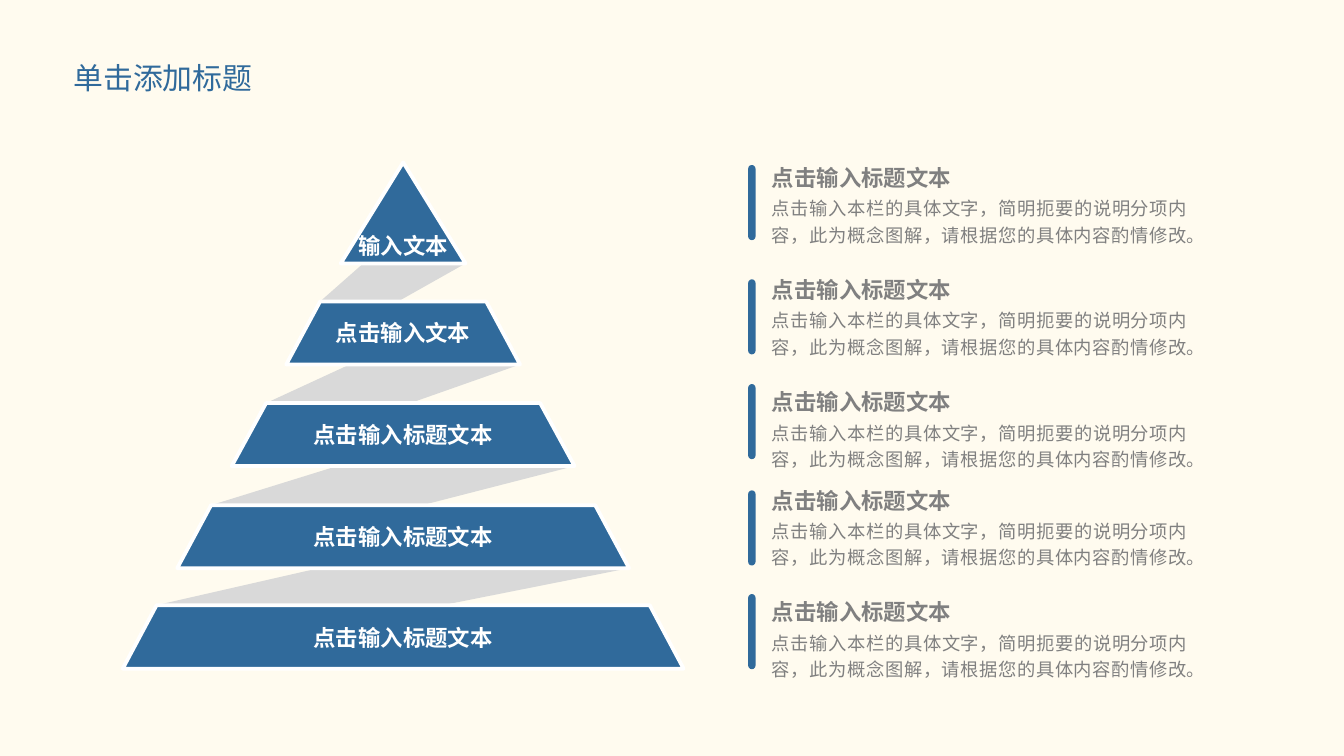
from pptx import Presentation
from pptx.dml.color import RGBColor
from pptx.enum.shapes import MSO_SHAPE
from pptx.enum.text import MSO_ANCHOR, MSO_AUTO_SIZE, PP_ALIGN
from pptx.oxml.ns import qn
from pptx.util import Cm, Pt
from lxml.etree import SubElement

CREAM = RGBColor(0xFF, 0xFB, 0xEF)
BLUE = RGBColor(0x30, 0x6A, 0x9B)
GREY = RGBColor(0x80, 0x80, 0x80)
SILVER = RGBColor(0xD9, 0xD9, 0xD9)
WHITE = RGBColor(0xFF, 0xFF, 0xFF)
FONT = "Noto Sans CJK SC"
CENTER = 7.62
HEADING = "点击输入标题文本"
DETAIL = "点击输入本栏的具体文字，简明扼要的说明分项内容，此为概念图解，请根据您的具体内容酌情修改。"


def write(box, text, size, color, bold=False, align=PP_ALIGN.LEFT, inset=(0, 0)):
    frame = box.text_frame
    frame.text = text
    frame.margin_left = frame.margin_right = Cm(inset[0])
    frame.margin_top = frame.margin_bottom = Cm(inset[1])
    paragraph = frame.paragraphs[0]
    paragraph.alignment = align
    span = paragraph.runs[0]
    span.font.name = FONT
    span.font.size = Pt(size)
    span.font.bold = bold
    span.font.color.rgb = color
    SubElement(span.font._element, qn("a:ea"), typeface=FONT)
    return frame


def draw_polygon(page, points, color):
    corners = [(Cm(x), Cm(y)) for x, y in points]
    builder = page.shapes.build_freeform(*corners[0])
    builder.add_line_segments(corners[1:], close=True)
    polygon = builder.convert_to_shape()
    polygon.shadow.inherit = False
    polygon.fill.solid()
    polygon.fill.fore_color.rgb = color
    polygon.line.fill.background()
    return polygon


deck = Presentation()
deck.slide_width, deck.slide_height = Cm(25.4), Cm(14.29)
page = deck.slides.add_slide(deck.slide_layouts[5])
page.background.fill.solid()
page.background.fill.fore_color.rgb = CREAM

title = page.shapes.title
title.left, title.top, title.width, title.height = Cm(1.14), Cm(0.99), Cm(4.9), Cm(0.94)
write(title, "单击添加标题", 16, BLUE, inset=(0.25, 0.13))

# top, bottom, half width at top, half width at bottom, label, label width, label middle
tiers = [
    (3.07, 4.98, 0, 1.18, "输入文本", 2.34, 4.64),
    (5.7, 6.89, 1.57, 2.21, "点击输入文本", 3.05, 6.29),
    (7.62, 8.81, 2.59, 3.24, HEADING, 5.13, 8.22),
    (9.55, 10.74, 3.63, 4.27, HEADING, 7.32, 10.15),
    (11.44, 12.64, 4.66, 5.3, HEADING, 9.27, 12.05),
]

for upper, lower in zip(tiers, tiers[1:]):
    fold_top, fold_half = (upper[0], upper[2]) if upper[2] else (3.91, 0.46)
    draw_polygon(page, [
        (CENTER + fold_half, fold_top),
        (CENTER - lower[2], lower[0]),
        (CENTER - lower[3], lower[1]),
        (CENTER + upper[3], upper[1]),
    ], SILVER)

for top, bottom, half_top, half_bottom, label, width, middle in tiers:
    points = [(CENTER + half_bottom, bottom), (CENTER - half_bottom, bottom), (CENTER - half_top, top)]
    if half_top:
        points.append((CENTER + half_top, top))
    tier = draw_polygon(page, points, BLUE)
    tier.line.color.rgb = WHITE
    tier.line.width = Pt(2)
    box = page.shapes.add_textbox(Cm(CENTER - width / 2), Cm(middle - 0.5), Cm(width), Cm(1))
    frame = write(box, label, 12, WHITE, True, PP_ALIGN.CENTER)
    frame.word_wrap = True
    frame.vertical_anchor = MSO_ANCHOR.MIDDLE

for bar_top, heading_top in [(3.12, 3.07), (5.28, 5.19), (7.26, 7.31), (9.27, 9.17), (11.23, 11.28)]:
    bar = page.shapes.add_shape(MSO_SHAPE.ROUND_2_SAME_RECTANGLE, Cm(14.14), Cm(bar_top), Cm(0.14), Cm(1.42))
    bar.adjustments[0] = bar.adjustments[1] = 0.5
    bar.shadow.inherit = False
    bar.fill.solid()
    bar.fill.fore_color.rgb = BLUE
    bar.line.fill.background()

    box = page.shapes.add_textbox(Cm(14.52), Cm(heading_top + 0.55), Cm(7.98), Cm(1.07))
    frame = write(box, DETAIL, 9.8, GREY, align=PP_ALIGN.JUSTIFY, inset=(0.07, 0.03))
    frame.word_wrap = True
    frame.auto_size = MSO_AUTO_SIZE.SHAPE_TO_FIT_TEXT
    frame.paragraphs[0].line_spacing = 1.2

    box = page.shapes.add_textbox(Cm(14.52), Cm(heading_top), Cm(3.56), Cm(0.58))
    frame = write(box, HEADING, 12, GREY, True, inset=(0.07, 0.03))
    frame.word_wrap = False
    frame.auto_size = MSO_AUTO_SIZE.SHAPE_TO_FIT_TEXT

deck.save("out.pptx")
